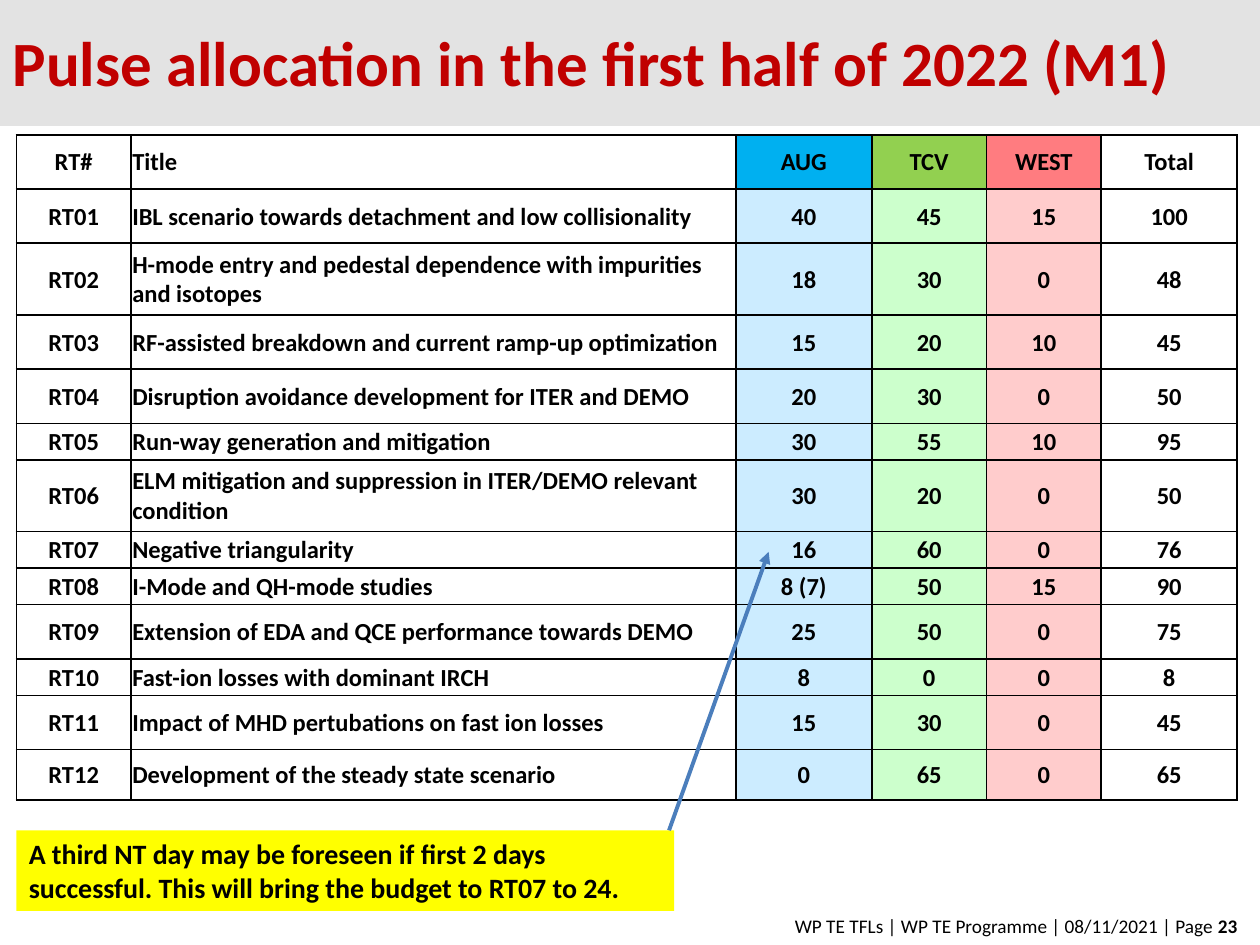
from lxml.etree import SubElement
from pptx import Presentation
from pptx.dml.color import RGBColor
from pptx.enum.shapes import MSO_CONNECTOR, MSO_SHAPE
from pptx.enum.text import MSO_ANCHOR, PP_ALIGN
from pptx.oxml import parse_xml
from pptx.oxml.ns import nsdecls, qn
from pptx.util import Inches, Pt

BLACK = RGBColor(0x00, 0x00, 0x00)
RED = RGBColor(0xC0, 0x00, 0x00)
GRAY = RGBColor(0xE3, 0xE3, 0xE3)
YELLOW = RGBColor(0xFF, 0xFF, 0x00)
BLUE = RGBColor(0x4B, 0x7E, 0xBC)
HEADS = {2: RGBColor(0x00, 0xB0, 0xF0), 3: RGBColor(0x92, 0xD0, 0x50),
         4: RGBColor(0xFF, 0x7C, 0x80)}
TINTS = {2: RGBColor(0xCC, 0xEC, 0xFF), 3: RGBColor(0xCC, 0xFF, 0xCC),
         4: RGBColor(0xFF, 0xCC, 0xCC)}

WIDTHS = [0.91, 4.8, 1.08, 0.91, 0.91, 1.08]
ROWS = [
    (0.43, "RT#", "Title", "AUG", "TCV", "WEST", "Total"),
    (0.43, "RT01", "IBL scenario towards detachment and low collisionality", 40, 45, 15, 100),
    (0.57, "RT02", "H-mode entry and pedestal dependence with impurities and isotopes", 18, 30, 0, 48),
    (0.43, "RT03", "RF-assisted breakdown and current ramp-up optimization", 15, 20, 10, 45),
    (0.43, "RT04", "Disruption avoidance development for ITER and DEMO", 20, 30, 0, 50),
    (0.29, "RT05", "Run-way generation and mitigation", 30, 55, 10, 95),
    (0.57, "RT06", "ELM mitigation and suppression in ITER/DEMO relevant condition", 30, 20, 0, 50),
    (0.29, "RT07", "Negative triangularity", 16, 60, 0, 76),
    (0.29, "RT08", "I-Mode and QH-mode studies", "8 (7)", 50, 15, 90),
    (0.43, "RT09", "Extension of EDA and QCE performance towards DEMO", 25, 50, 0, 75),
    (0.29, "RT10", "Fast-ion losses with dominant IRCH", 8, 0, 0, 8),
    (0.43, "RT11", "Impact of MHD pertubations on fast ion losses", 15, 30, 0, 45),
    (0.4, "RT12", "Development of the steady state scenario", 0, 65, 0, 65),
]


class Deck:
    """Hold the style and the current slide, and add each kind of element."""

    def __init__(self, font):
        self.font = font
        self.show = Presentation()
        self.show.slide_width, self.show.slide_height = Inches(10), Inches(7.5)
        self.slide = self.show.slides.add_slide(self.show.slide_layouts[5])

    def style(self, para, size, color=BLACK, bold=True, align=PP_ALIGN.LEFT):
        para.alignment = align
        font = para.font
        font.name, font.size, font.bold = self.font, Pt(size), bold
        font.color.rgb = color

    def title(self, text, *box):
        shape = self.slide.shapes.title
        shape.left, shape.top, shape.width, shape.height = map(Inches, box)
        frame = shape.text_frame
        frame.text = text
        frame.vertical_anchor = MSO_ANCHOR.MIDDLE
        self.style(frame.paragraphs[0], 36, RED)

    def block(self, fill, *box):
        shape = self.slide.shapes.add_shape(MSO_SHAPE.RECTANGLE, *map(Inches, box))
        shape.shadow.inherit = False
        shape.fill.solid()
        shape.fill.fore_color.rgb = fill
        shape.line.fill.background()
        return shape

    def band(self, fill, *box):
        self.slide.shapes.title.element.addprevious(self.block(fill, *box).element)

    def note(self, text, fill, *box):
        frame = self.block(fill, *box).text_frame
        frame.word_wrap = True
        frame.vertical_anchor = MSO_ANCHOR.TOP
        frame.text = text
        self.style(frame.paragraphs[0], 16)

    def footer(self, text, page, *box):
        frame = self.slide.shapes.add_textbox(*map(Inches, box)).text_frame
        frame.word_wrap = True
        para = frame.paragraphs[0]
        self.style(para, 11, bold=False, align=PP_ALIGN.RIGHT)
        para.add_run().text = text
        run = para.add_run()
        run.text = page
        run.font.bold = True

    def cell(self, cell, text, align, fill):
        cell.margin_left = cell.margin_right = cell.margin_top = Inches(0.01)
        cell.margin_bottom = 0
        cell.vertical_anchor = MSO_ANCHOR.MIDDLE
        cell.text = str(text)
        self.style(cell.text_frame.paragraphs[0], 14, align=align)
        props = cell._tc.get_or_add_tcPr()
        for side in "LRTB":
            props.append(parse_xml(
                f'<a:ln{side} w="{Pt(1)}" {nsdecls("a")}><a:solidFill>'
                f'<a:srgbClr val="{BLACK}"/></a:solidFill></a:ln{side}>'))
        if fill is None:
            cell.fill.background()
        else:
            cell.fill.solid()
            cell.fill.fore_color.rgb = fill

    def table(self, rows, widths, left, top):
        size = sum(widths), sum(row[0] for row in rows)
        table = self.slide.shapes.add_table(
            len(rows), len(widths), *map(Inches, (left, top, *size))).table
        table.horz_banding = False
        for col, width in zip(table.columns, widths):
            col.width = Inches(width)
        for r, (height, *texts) in enumerate(rows):
            table.rows[r].height = Inches(height)
            fills = TINTS if r else HEADS
            for c, text in enumerate(texts):
                align = PP_ALIGN.LEFT if c == 1 else PP_ALIGN.CENTER
                self.cell(table.cell(r, c), text, align, fills.get(c))

    def arrow(self, color, *ends):
        line = self.slide.shapes.add_connector(
            MSO_CONNECTOR.STRAIGHT, *map(Inches, ends))
        line.line.color.rgb = color
        line.line.width = Pt(2.25)
        SubElement(line.line._get_or_add_ln(), qn("a:tailEnd"), type="triangle")
        SubElement(line.element.spPr, qn("a:effectLst"))


def main():
    deck = Deck("Calibri")
    deck.band(GRAY, 0, 0, 10, 1)
    deck.title("Pulse allocation in the first half of 2022 (M1)", 0, 0.13, 9.53, 0.71)
    deck.footer("WP TE TFLs | WP TE Programme | 08/11/2021 | Page ", "23",
                0.91, 7.21, 9.01, 0.29)
    deck.table(ROWS, WIDTHS, 0.13, 1.07)
    deck.note("A third NT day may be foreseen if first 2 days successful. "
              "This will bring the budget to RT07 to 24.", YELLOW, 0.13, 6.59, 5.22, 0.64)
    deck.arrow(BLUE, 5.31, 6.59, 6.1, 4.38)
    deck.show.save("out.pptx")


if __name__ == "__main__":
    main()
